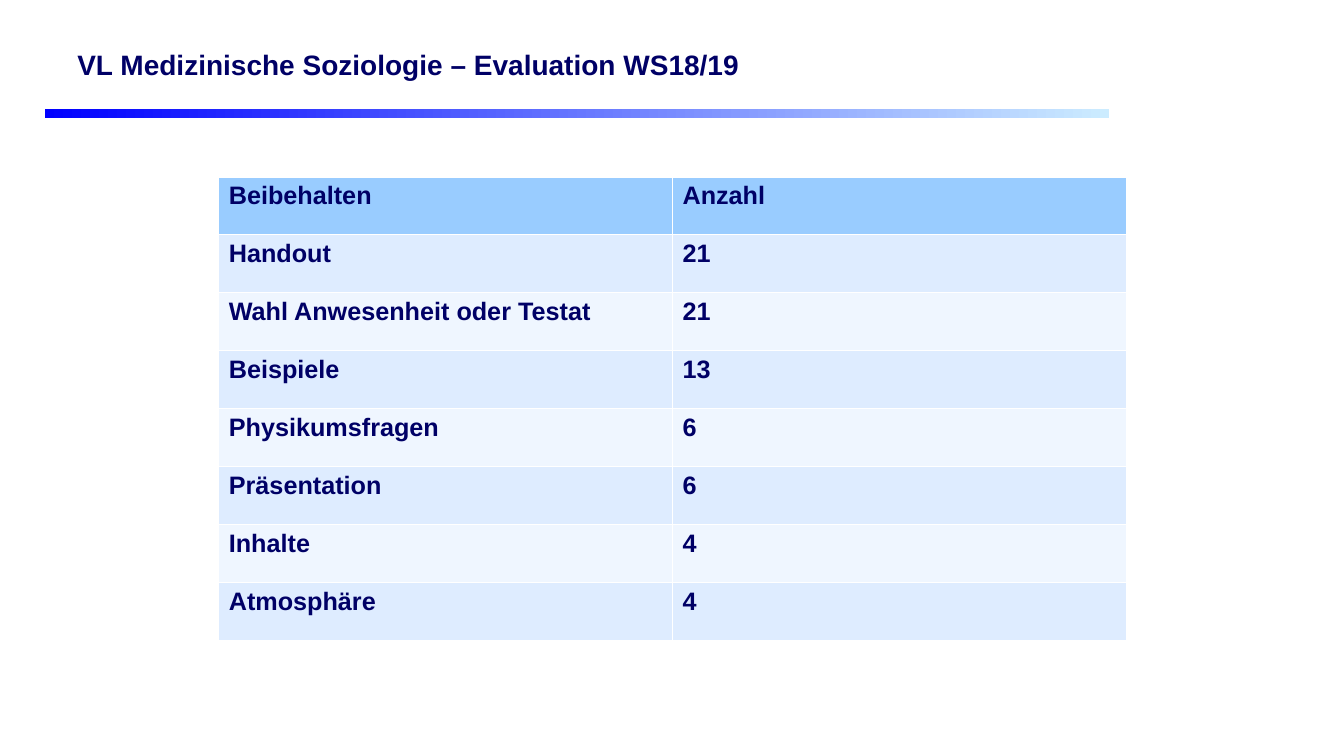
from dataclasses import dataclass

from lxml.etree import SubElement
from pptx import Presentation
from pptx.dml.color import RGBColor as Rgb
from pptx.enum.shapes import MSO_SHAPE as Shape
from pptx.enum.text import MSO_ANCHOR as Anchor, PP_ALIGN as Align
from pptx.oxml.ns import qn
from pptx.util import Inches, Pt


@dataclass(frozen=True)
class Theme:
    font: str = "Arial"
    ink: str = "000066"
    paper: str = "FFFFFF"
    head: str = "99CCFF"
    bands: tuple = ("DEECFF", "EFF6FF")
    fade: tuple = ("0000FF", "CCECFF")
    title: int = 20
    body: int = 18
    rule: int = 1


class Deck:
    def __init__(self, theme):
        self.theme = theme
        self.prs = Presentation()
        self.prs.slide_width = Inches(13.33)
        self.prs.slide_height = Inches(7.5)
        self.slide = self.prs.slides.add_slide(self.prs.slide_layouts[5])

    def place(self, left, top, width, height):
        wide, high = self.prs.slide_width, self.prs.slide_height
        shares = (left, wide), (top, high), (width, wide), (height, high)
        return [round(part * full / 100) for part, full in shares]

    def paint(self, item, color):
        item.fill.solid()
        item.fill.fore_color.rgb = Rgb.from_string(color)

    def label(self, frame, text, size):
        frame.text = text
        para = frame.paragraphs[0]
        para.alignment = Align.LEFT
        font = para.font
        font.name, font.size, font.bold = self.theme.font, Pt(size), True
        font.color.rgb = Rgb.from_string(self.theme.ink)

    def title(self, text, *box):
        shape = self.slide.shapes.title
        shape.left, shape.top, shape.width, shape.height = self.place(*box)
        self.paint(shape, self.theme.paper)
        shape.text_frame.vertical_anchor = Anchor.MIDDLE
        self.label(shape.text_frame, text, self.theme.title)

    def bar(self, *box):
        shape = self.slide.shapes.add_shape(Shape.RECTANGLE, *self.place(*box))
        shape.shadow.inherit = False
        shape.line.fill.background()
        shape.fill.gradient()
        shape.fill.gradient_angle = 0
        for stop, color in zip(shape.fill.gradient_stops, self.theme.fade):
            stop.color.rgb = Rgb.from_string(color)

    def edge(self, cell):
        props = cell._tc.get_or_add_tcPr()
        for spot, side in enumerate(("lnL", "lnR", "lnT", "lnB")):
            line = props.makeelement(qn(f"a:{side}"), {"w": str(Pt(self.theme.rule))})
            fill = SubElement(line, qn("a:solidFill"))
            SubElement(fill, qn("a:srgbClr"), val=self.theme.paper)
            props.insert(spot, line)

    def table(self, rows, *box):
        frame = self.slide.shapes.add_table(len(rows), len(rows[0]), *self.place(*box))
        for i, row in enumerate(rows):
            color = self.theme.bands[(i - 1) % 2] if i else self.theme.head
            for j, text in enumerate(row):
                cell = frame.table.cell(i, j)
                self.paint(cell, color)
                self.edge(cell)
                self.label(cell.text_frame, text, self.theme.body)


def main():
    rows = [
        ("Beibehalten", "Anzahl"),
        ("Handout", "21"),
        ("Wahl Anwesenheit oder Testat", "21"),
        ("Beispiele", "13"),
        ("Physikumsfragen", "6"),
        ("Präsentation", "6"),
        ("Inhalte", "4"),
        ("Atmosphäre", "4"),
    ]
    deck = Deck(Theme())
    deck.bar(3.35, 14.45, 79.2, 1.15)
    deck.table(rows, 16.28, 23.4, 67.52, 61.3)
    deck.title("VL Medizinische Soziologie – Evaluation WS18/19", 5, 4, 73.4, 9)
    deck.prs.save("out.pptx")


if __name__ == "__main__":
    main()
